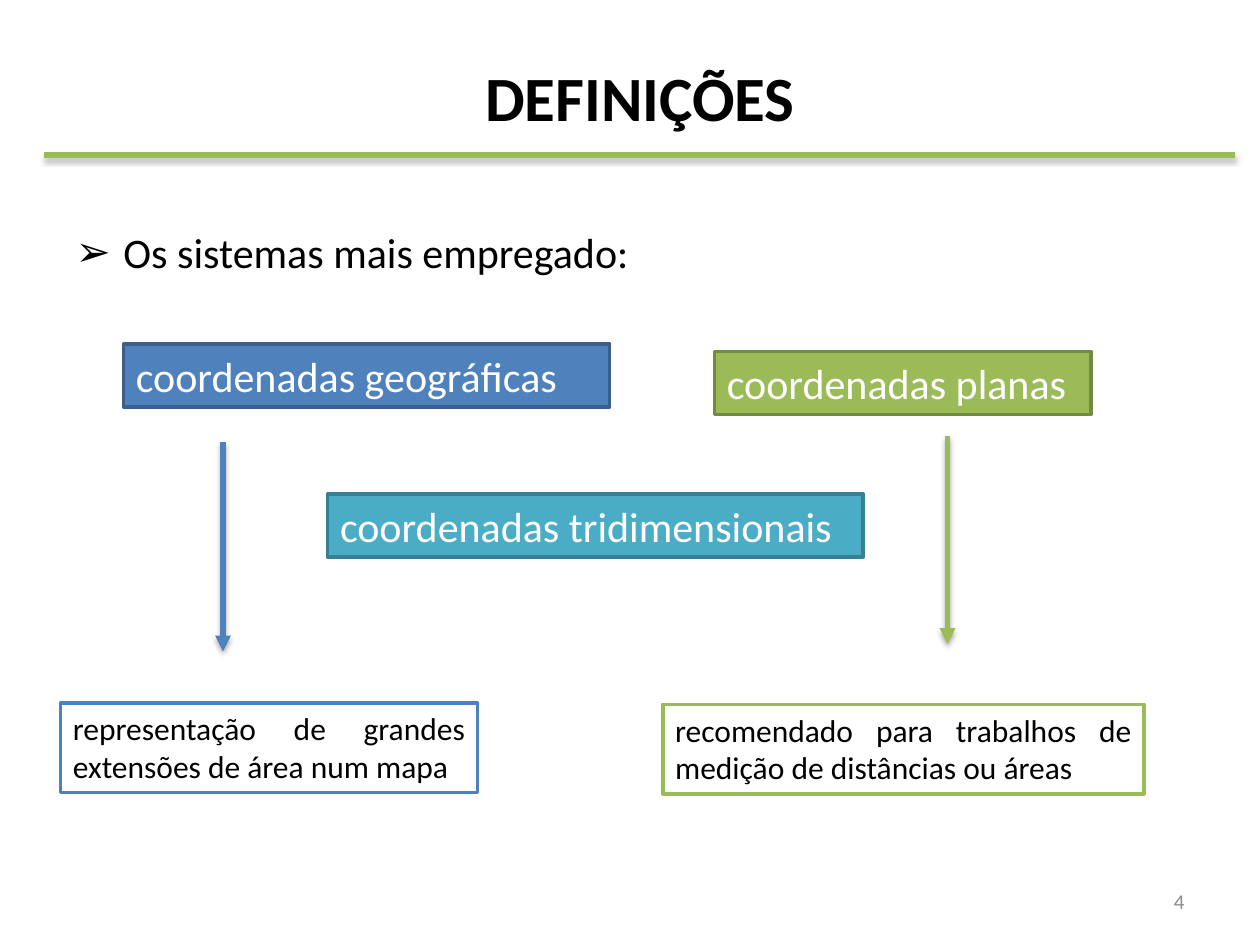
"""Build the slide on the coordinate systems used in topography."""
import lxml.etree
import pptx
import pptx.dml.color
import pptx.enum.shapes
import pptx.enum.text
import pptx.oxml
import pptx.oxml.ns
import pptx.util

Inches = pptx.util.Inches
Pt = pptx.util.Pt
Align = pptx.enum.text.PP_ALIGN
Anchor = pptx.enum.text.MSO_ANCHOR

COLORS = {
    "black": "000000", "white": "FFFFFF", "gray": "8C8C8C",
    "blue": "4F81BD", "dark_blue": "3A5F8C",
    "green": "9BBB59", "dark_green": "738A42",
    "aqua": "4BACC6", "dark_aqua": "377F92",
}


def color(name):
    return pptx.dml.color.RGBColor.from_string(COLORS[name])


def write_text(text_frame, text, size=24, ink="black", bold=False,
               align=Align.LEFT, anchor=Anchor.TOP, font="Calibri"):
    text_frame.word_wrap = True
    text_frame.vertical_anchor = anchor
    paragraph = text_frame.paragraphs[0]
    paragraph.alignment = align
    run = paragraph.add_run()
    run.text = text
    run.font.name = font
    run.font.size = Pt(size)
    run.font.bold = bold
    run.font.color.rgb = color(ink)
    return paragraph


class SlideBuilder:
    def __init__(self, presentation):
        self.slide = presentation.slides.add_slide(presentation.slide_layouts[1])
        self.line_width = Pt(3)
        self.border_width = Pt(2)

    def place(self, shape, left, top, width, height):
        shape.left, shape.top = Inches(left), Inches(top)
        shape.width, shape.height = Inches(width), Inches(height)

    def title(self, text, *position):
        shape = self.slide.shapes.title
        self.place(shape, *position)
        write_text(shape.text_frame, text, size=36, bold=True,
                   align=Align.CENTER, anchor=Anchor.MIDDLE)

    def body(self, text, *position):
        shape = self.slide.placeholders[1]
        self.place(shape, *position)
        paragraph = write_text(shape.text_frame, text, align=Align.JUSTIFY)
        paragraph.space_before = Pt(4.8)
        properties = paragraph._p.get_or_add_pPr()
        properties.set("marL", str(Inches(0.38)))
        properties.set("indent", str(-Inches(0.38)))
        bullet = lxml.etree.SubElement(properties, pptx.oxml.ns.qn("a:buChar"))
        bullet.set("char", "➢")

    def page_number(self, text, *position):
        shape = self.slide.shapes.add_textbox(*map(Inches, position))
        write_text(shape.text_frame, text, size=12, ink="gray",
                   align=Align.RIGHT, anchor=Anchor.MIDDLE)

    def box(self, text, *position, fill, border, **text_format):
        shape = self.slide.shapes.add_shape(
            pptx.enum.shapes.MSO_SHAPE.RECTANGLE, *map(Inches, position))
        shape.shadow.inherit = False
        shape.fill.solid()
        shape.fill.fore_color.rgb = color(fill)
        shape.line.color.rgb = color(border)
        shape.line.width = self.border_width
        write_text(shape.text_frame, text, **text_format)
        shape.text_frame.auto_size = pptx.enum.text.MSO_AUTO_SIZE.SHAPE_TO_FIT_TEXT

    def line(self, *ends, ink, arrow=False):
        connector = self.slide.shapes.add_connector(
            pptx.enum.shapes.MSO_CONNECTOR.STRAIGHT, *map(Inches, ends))
        connector.line.color.rgb = color(ink)
        connector.line.width = self.line_width
        if arrow:
            tail = lxml.etree.SubElement(
                connector.line._get_or_add_ln(), pptx.oxml.ns.qn("a:tailEnd"))
            tail.set("type", "triangle")
        shadow = pptx.oxml.parse_xml(
            f'<a:effectLst {pptx.oxml.ns.nsdecls("a")}>'
            f'<a:outerShdw blurRad="{Pt(3.1)}" dist="{Pt(1.8)}" dir="5400000" rotWithShape="0">'
            f'<a:srgbClr val="{COLORS["black"]}"><a:alpha val="35000"/></a:srgbClr>'
            '</a:outerShdw></a:effectLst>')
        connector._element.spPr.append(shadow)


def main():
    presentation = pptx.Presentation()
    presentation.slide_width = Inches(10)
    presentation.slide_height = Inches(7.5)
    builder = SlideBuilder(presentation)

    builder.title("DEFINIÇÕES", 0.58, 0.14, 9, 1.25)
    builder.body("Os sistemas mais empregado:", 0.5, 1.75, 9, 4.95)
    builder.page_number("4", 7.17, 6.95, 2.33, 0.4)
    builder.line(0.35, 1.23, 9.8, 1.23, ink="green")

    systems = [
        ("coordenadas geográficas", 0.98, 2.73, 3.86, "blue"),
        ("coordenadas planas", 5.67, 2.79, 2.99, "green"),
        ("coordenadas tridimensionais", 2.6, 3.92, 4.25, "aqua"),
    ]
    for text, left, top, width, fill in systems:
        builder.box(text, left, top, width, 0.5, fill=fill,
                    border=f"dark_{fill}", ink="white")

    uses = [
        ("representação de grandes extensões de área num mapa",
         (0.48, 5.58, 3.31, 0.71), (1.77, 3.51, 1.77, 5.17), "blue"),
        ("recomendado para trabalhos de medição de distâncias ou áreas",
         (5.26, 5.59, 3.82, 0.71), (7.52, 3.46, 7.52, 5.11), "green"),
    ]
    for text, position, ends, accent in uses:
        builder.line(*ends, ink=accent, arrow=True)
        builder.box(text, *position, fill="white", border=accent,
                    size=18, align=Align.JUSTIFY)

    presentation.save("out.pptx")


if __name__ == "__main__":
    main()
